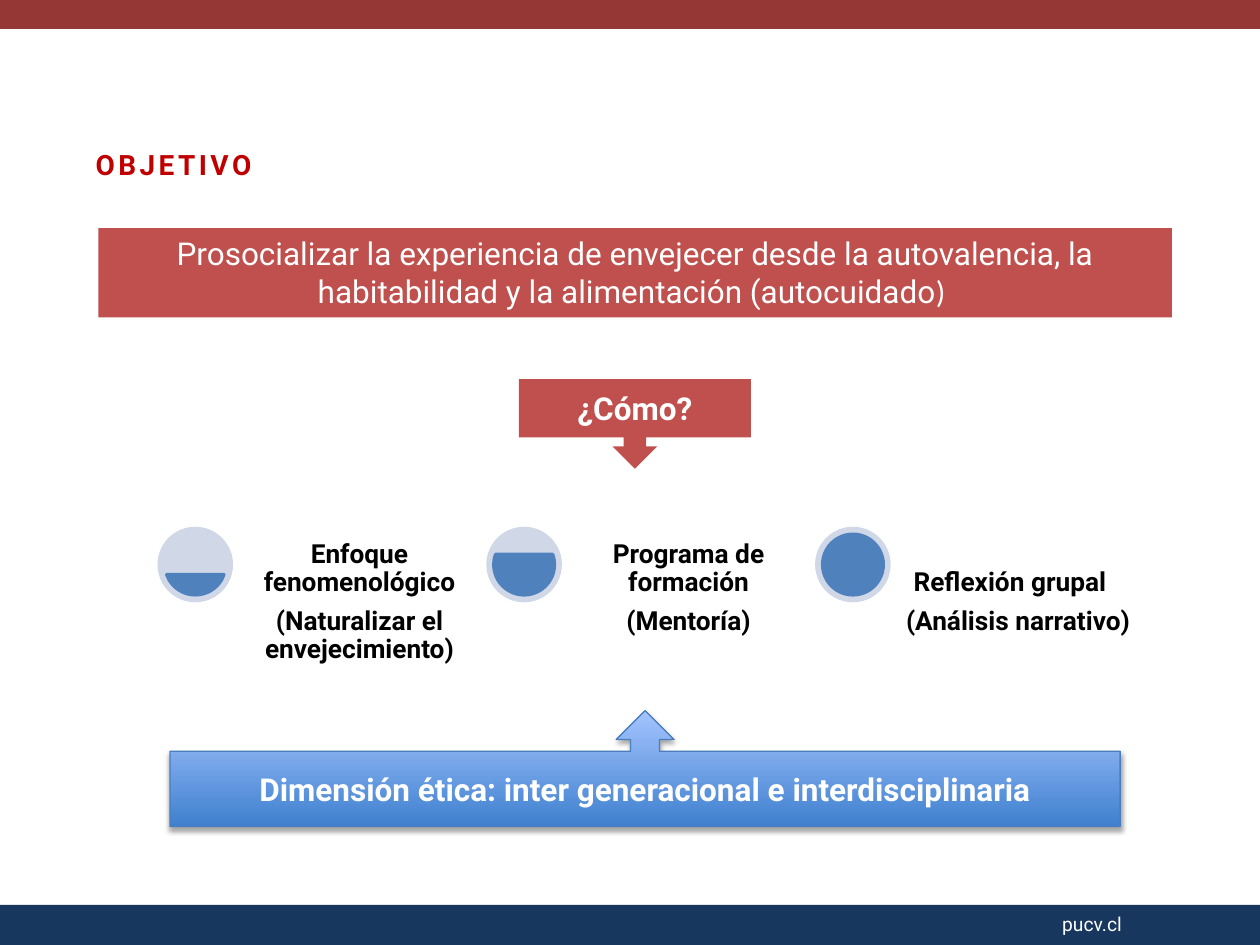
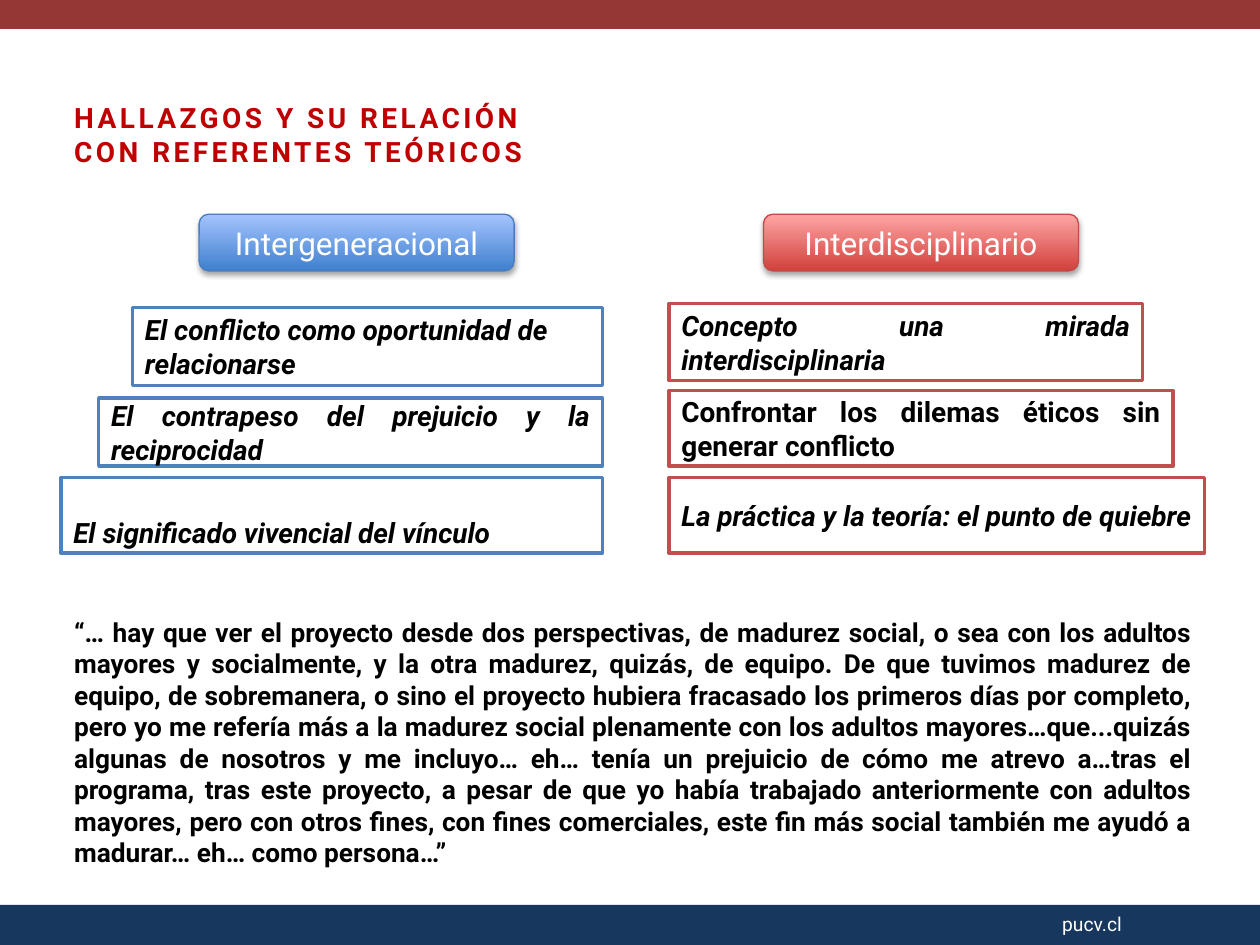
from dataclasses import dataclass
from typing import NamedTuple, Optional

from lxml import etree
from pptx import Presentation
from pptx.dml.color import RGBColor
from pptx.enum.shapes import MSO_SHAPE
from pptx.enum.text import MSO_ANCHOR, PP_ALIGN
from pptx.oxml.ns import qn
from pptx.util import Pt

RECT, ROUNDED = MSO_SHAPE.RECTANGLE, MSO_SHAPE.ROUNDED_RECTANGLE
OVAL, CHORD = MSO_SHAPE.OVAL, MSO_SHAPE.CHORD
UP_CALLOUT, DOWN_CALLOUT = MSO_SHAPE.UP_ARROW_CALLOUT, MSO_SHAPE.DOWN_ARROW_CALLOUT
TOP, MIDDLE, BOTTOM = MSO_ANCHOR.TOP, MSO_ANCHOR.MIDDLE, MSO_ANCHOR.BOTTOM
LEFT, CENTER, JUSTIFY = PP_ALIGN.LEFT, PP_ALIGN.CENTER, PP_ALIGN.JUSTIFY

WHITE = RGBColor(0xFF, 0xFF, 0xFF)
BLACK = RGBColor(0x00, 0x00, 0x00)
NAVY = RGBColor(0x17, 0x37, 0x5E)
WINE = RGBColor(0x95, 0x37, 0x35)
CRIMSON = RGBColor(0xC0, 0x00, 0x00)
RED = RGBColor(0xC0, 0x50, 0x4D)
BLUE = RGBColor(0x4F, 0x81, 0xBD)
PALE_BLUE = RGBColor(0xD0, 0xD8, 0xE8)

FONT = "Roboto"
PAGE_WIDTH, PAGE_HEIGHT = 720, 540
FOOTER_TOP = 517


class Area(NamedTuple):
    left: float
    top: float
    width: float
    height: float


class Glossy(NamedTuple):
    """Colours of a shaded button with a soft shadow."""
    dark: RGBColor
    light: RGBColor
    edge: RGBColor


GLOSSY_BLUE = Glossy(RGBColor(0x3F, 0x80, 0xCE), RGBColor(0xA4, 0xC4, 0xFF),
                     RGBColor(0x4B, 0x7E, 0xBC))
GLOSSY_RED = Glossy(RGBColor(0xD1, 0x40, 0x3C), RGBColor(0xFF, 0xA6, 0xA5),
                    RGBColor(0xBF, 0x4C, 0x48))


@dataclass(frozen=True)
class Style:
    size: float
    color: RGBColor = BLACK
    bold: bool = False
    italic: bool = False
    align: PP_ALIGN = LEFT
    anchor: MSO_ANCHOR = TOP
    spacing: Optional[float] = None
    inset: Optional[float] = None
    bottom_inset: Optional[float] = None


TITLE = Style(16, CRIMSON, bold=True)
FOOTER = Style(11, WHITE)
BANNER = Style(18, WHITE, align=CENTER)
BUTTON = Style(18, WHITE, align=CENTER, anchor=MIDDLE)
CALLOUT = Style(18, WHITE, bold=True, align=CENTER, anchor=MIDDLE)
STEP_HEADING = Style(15, bold=True, align=CENTER, anchor=BOTTOM, spacing=0.9, inset=2.9)
STEP_DETAIL = Style(15, bold=True, align=CENTER, spacing=0.9, inset=2.9)
QUOTE = Style(15, bold=True, align=JUSTIFY)
FINDING = Style(16, bold=True, italic=True, align=JUSTIFY, anchor=MIDDLE)
FINDING_LEFT = Style(16, bold=True, italic=True, anchor=MIDDLE)
FINDING_LOW = Style(16, bold=True, italic=True, anchor=BOTTOM, bottom_inset=2)
FINDING_UPRIGHT = Style(16, bold=True, align=JUSTIFY, anchor=MIDDLE)


class Step(NamedTuple):
    heading: str
    detail: str
    chord: tuple[float, float]
    heading_left: float
    detail_left: float
    detail_width: float


STEPS = [
    Step("Enfoque fenomenológico", "(Naturalizar el envejecimiento)",
         (11.68, 96.32), 141.8, 141.8, 127.4),
    Step("Programa de formación", "(Mentoría)",
         (204.32, 119.68), 329.8, 329.8, 127.4),
    Step("Reflexión grupal", "(Análisis narrativo)",
         (162, 162), 513.4, 506.2, 151.2),
]


class Finding(NamedTuple):
    text: str
    top: float
    width: float
    height: float
    style: Style


GENERATION_FINDINGS = [
    Finding("El conflicto como oportunidad de relacionarse", 175.7, 268.6, 44.6, FINDING_LEFT),
    Finding("El contrapeso del prejuicio y la reciprocidad", 227.5, 288, 38.9, FINDING),
    Finding("El significado vivencial del vínculo", 272.9, 309.6, 43.2, FINDING_LOW),
]
DISCIPLINE_FINDINGS = [
    Finding("Concepto una mirada interdisciplinaria", 173.5, 270.7, 43.9, FINDING),
    Finding("Confrontar los dilemas éticos sin generar conflicto", 223.2, 288, 43.2,
            FINDING_UPRIGHT),
    Finding("La práctica y la teoría: el punto de quiebre", 272.9, 306, 43.2, FINDING),
]

QUOTE_TEXT = (
    "“… hay que ver el proyecto desde dos perspectivas, de madurez social, o sea con los "
    "adultos mayores y socialmente, y la otra madurez, quizás, de equipo. De que tuvimos "
    "madurez de equipo, de sobremanera, o sino el proyecto hubiera fracasado los primeros "
    "días por completo, pero yo me refería más a la madurez social plenamente con los "
    "adultos mayores…que...quizás algunas de nosotros y me incluyo… eh… tenía un prejuicio "
    "de cómo me atrevo a…tras el programa, tras este proyecto, a pesar de que yo había "
    "trabajado anteriormente con adultos mayores, pero con otros fines, con fines "
    "comerciales, este fin más social también me ayudó a madurar… eh… como persona…”"
)


# Drawing helpers
def write(shape, text: str, style: Style):
    """Fill a shape with one paragraph and return its run."""
    frame = shape.text_frame
    frame.word_wrap = True
    frame.vertical_anchor = style.anchor
    if style.inset is not None:
        frame.margin_left = frame.margin_right = Pt(style.inset)
        frame.margin_top = frame.margin_bottom = Pt(style.inset)
    if style.bottom_inset is not None:
        frame.margin_bottom = Pt(style.bottom_inset)
    para = frame.paragraphs[0]
    para.alignment = style.align
    if style.spacing:
        para.line_spacing = style.spacing
    span = para.add_run()
    span.text = text
    font = para.font
    font.name, font.size = FONT, Pt(style.size)
    font.bold, font.italic = style.bold, style.italic
    font.color.rgb = style.color
    return span


def add_text(page, area: Area, text: str, style: Style):
    return write(page.shapes.add_textbox(*map(Pt, area)), text, style)


def add_block(page, kind, area: Area, fill: RGBColor, line: Optional[RGBColor] = None):
    """Add a flat shape, outlined with 2 points when a line colour is given."""
    shape = page.shapes.add_shape(kind, *map(Pt, area))
    shape.shadow.inherit = False
    shape.fill.solid()
    shape.fill.fore_color.rgb = fill
    if line is None:
        shape.line.fill.background()
    else:
        shape.line.color.rgb = line
        shape.line.width = Pt(2)
    return shape


def add_glossy(page, kind, area: Area, colors: Glossy):
    shape = add_block(page, kind, area, colors.dark, colors.edge)
    shape.line.width = Pt(0.75)
    shape.fill.gradient()
    shape.fill.gradient_angle = 90
    for stop, color in zip(shape.fill.gradient_stops, (colors.dark, colors.light)):
        stop.color.rgb = color
    effects = shape._element.spPr.find(qn("a:effectLst"))
    shadow = etree.SubElement(effects, qn("a:outerShdw"), blurRad=str(Pt(3.1)),
                              dist=str(Pt(1.8)), dir="5400000", rotWithShape="0")
    black = etree.SubElement(shadow, qn("a:srgbClr"), val="000000")
    etree.SubElement(black, qn("a:alpha"), val="35000")
    return shape


def add_page(deck, title: str, title_area: Area):
    """Add a page with the shared bands, footer and spaced title."""
    page = deck.slides.add_slide(deck.slide_layouts[6])
    add_block(page, RECT, Area(0, FOOTER_TOP, PAGE_WIDTH, PAGE_HEIGHT - FOOTER_TOP), NAVY)
    add_text(page, Area(599.8, 517.7, 120, 22), "pucv.cl", FOOTER)
    add_block(page, RECT, Area(0, 0, PAGE_WIDTH, 16.6), WINE)
    span = add_text(page, title_area, title, TITLE)
    span._r.get_or_add_rPr().set("spc", "200")
    return page


# Pages
def build_objective(deck) -> None:
    page = add_page(deck, "OBJETIVO", Area(47.5, 80.6, 303.8, 26.6))
    banner = add_block(page, RECT, Area(56.2, 130.3, 613.4, 51.1), RED)
    write(banner, "Prosocializar la experiencia de envejecer desde la autovalencia, la "
                  "habitabilidad y la alimentación (autocuidado", BANNER)
    closing = banner.text_frame.paragraphs[0].add_run()
    closing.text = ") "
    closing.font.name = "Calibri"

    # Three steps, each with a gauge that fills up
    top, diameter, rim = 301, 43.2, 4.3
    gauge = diameter - 2 * rim
    for index, step in enumerate(STEPS):
        left = 90 + index * 187.9
        add_block(page, OVAL, Area(left, top, diameter, diameter), PALE_BLUE)
        level = add_block(page, CHORD, Area(left + rim, top + rim, gauge, gauge), BLUE, BLUE)
        level.adjustments[0], level.adjustments[1] = step.chord
        add_text(page, Area(step.detail_left, top + diameter, step.detail_width, 180.7),
                 step.detail, STEP_DETAIL)
        add_text(page, Area(step.heading_left, top, 127.4, diameter),
                 step.heading, STEP_HEADING)

    # Callouts above and below the steps
    ethics = add_glossy(page, UP_CALLOUT, Area(97.2, 406.1, 542.9, 66.2), GLOSSY_BLUE)
    write(ethics, "Dimensión ética: inter generacional e interdisciplinaria", CALLOUT)
    question = add_block(page, DOWN_CALLOUT, Area(296.6, 216.7, 132.5, 51.1), RED)
    write(question, "¿Cómo?", CALLOUT)


def build_findings(deck) -> None:
    page = add_page(deck, "HALLAZGOS Y SU RELACIÓN CON REFERENTES TEÓRICOS",
                    Area(35.3, 54, 303.8, 46.1))

    # Left column is flush right, right column is flush left
    for item in GENERATION_FINDINGS:
        area = Area(344.4 - item.width, item.top, item.width, item.height)
        write(add_block(page, RECT, area, WHITE, BLUE), item.text, item.style)
    for item in DISCIPLINE_FINDINGS:
        area = Area(382.3, item.top, item.width, item.height)
        write(add_block(page, RECT, area, WHITE, RED), item.text, item.style)

    add_text(page, Area(35.3, 348.5, 653, 152.6), QUOTE_TEXT, QUOTE)

    # Column headings
    for left, heading, colors in ((113.8, "Intergeneracional", GLOSSY_BLUE),
                                  (436.3, "Interdisciplinario", GLOSSY_RED)):
        button = add_glossy(page, ROUNDED, Area(left, 122.4, 180, 32.4), colors)
        write(button, heading, BUTTON)


def main() -> None:
    deck = Presentation()
    deck.slide_width, deck.slide_height = Pt(PAGE_WIDTH), Pt(PAGE_HEIGHT)
    build_objective(deck)
    build_findings(deck)
    deck.save("out.pptx")


if __name__ == "__main__":
    main()
